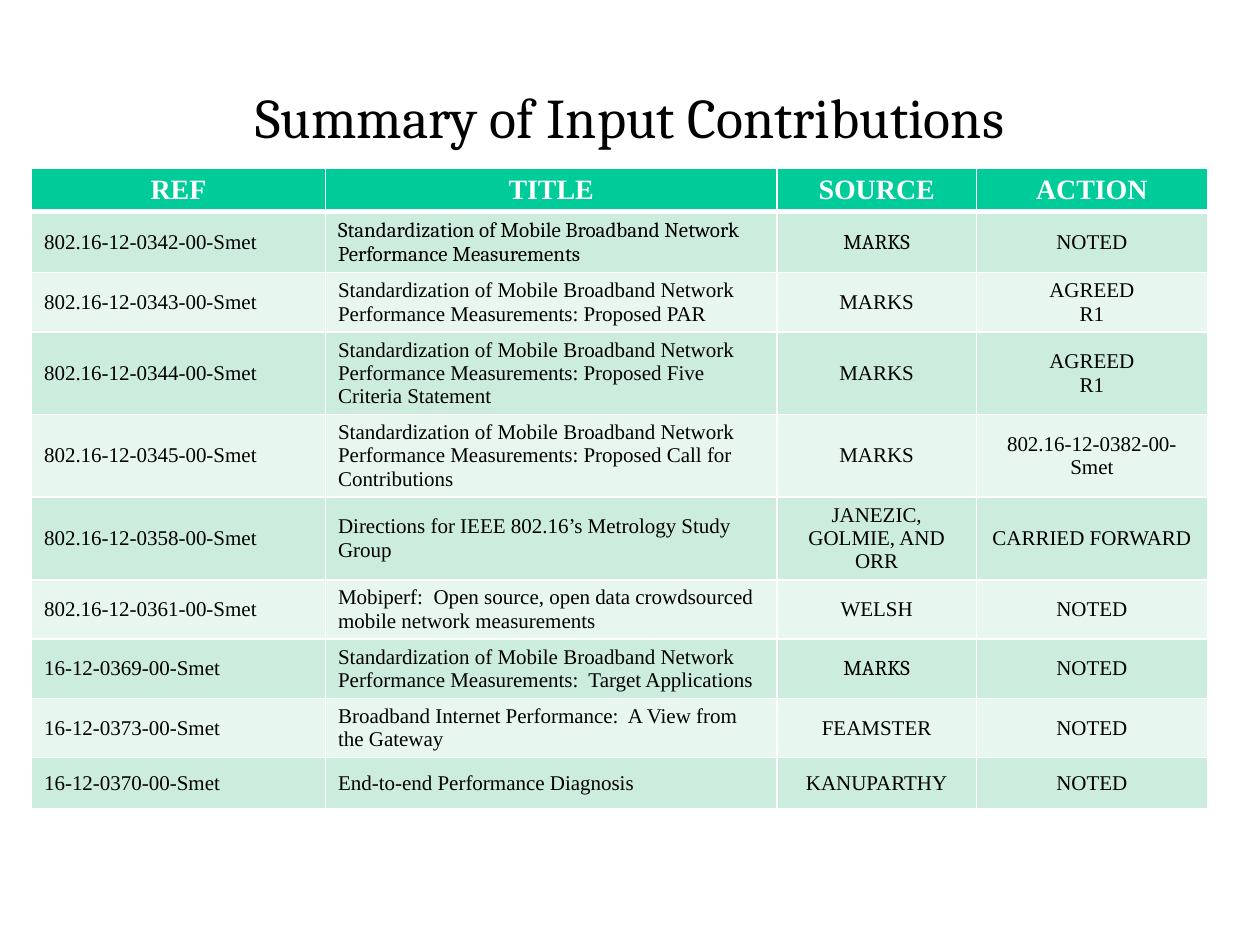
from pptx import Presentation
from pptx.util import Pt
from pptx.dml.color import RGBColor
from pptx.enum import text as t
from pptx.oxml import parse_xml
from pptx.oxml.ns import nsdecls

# Content
TITLE = "Summary of Input Contributions"
HEAD = ("REF", "TITLE", "SOURCE", "ACTION")
STD = "Standardization of Mobile Broadband Network Performance Measurements"
ROWS = [
    ("802.16-12-0342-00-Smet", STD, "MARKS", "NOTED"),
    ("802.16-12-0343-00-Smet", STD + ": Proposed PAR", "MARKS", "AGREED\nR1"),
    ("802.16-12-0344-00-Smet", STD + ": Proposed Five Criteria Statement",
     "MARKS", "AGREED\nR1"),
    ("802.16-12-0345-00-Smet", STD + ": Proposed Call for Contributions",
     "MARKS", "802.16-12-0382-00-Smet"),
    ("802.16-12-0358-00-Smet",
     "Directions for IEEE 802.16’s Metrology Study Group",
     "JANEZIC, GOLMIE, AND ORR", "CARRIED FORWARD"),
    ("802.16-12-0361-00-Smet",
     "Mobiperf:  Open source, open data crowdsourced mobile network "
     "measurements", "WELSH", "NOTED"),
    ("16-12-0369-00-Smet", STD + ":  Target Applications", "MARKS", "NOTED"),
    ("16-12-0373-00-Smet",
     "Broadband Internet Performance:  A View from the Gateway",
     "FEAMSTER", "NOTED"),
    ("16-12-0370-00-Smet", "End-to-end Performance Diagnosis",
     "KANUPARTHY", "NOTED"),
]
SERIF, ALT = "Times New Roman", "Cambria"
ALT_CELLS = {(1, 1), (1, 2), (7, 2)}  # row, column
WIDTHS = (168, 258, 114, 132)
HEAD_H, ROW_H = 21.6, 29.4
GREEN, BANDS = "00CC99", ("E7F6EF", "CCECDE")
WHITE, BLACK = "FFFFFF", "000000"


def paint(fill, color):
    fill.solid()
    fill.fore_color.rgb = RGBColor.from_string(color)


def style(frame, font, size, color, bold, align):
    for para in frame.paragraphs:
        para.alignment = align
        for run in para.runs:
            run.font.name, run.font.size, run.font.bold = font, Pt(size), bold
            run.font.color.rgb = RGBColor.from_string(color)


def border(cell, side, width):
    cell._tc.get_or_add_tcPr().append(parse_xml(
        f'<a:ln{side} {nsdecls("a")} w="{Pt(width)}"><a:solidFill>'
        f'<a:srgbClr val="{WHITE}"/></a:solidFill></a:ln{side}>'))


prs = Presentation()
prs.slide_width, prs.slide_height = Pt(720), Pt(540)
slide = prs.slides.add_slide(prs.slide_layouts[5])
MID, LEFT = t.PP_ALIGN.CENTER, t.PP_ALIGN.LEFT

# Title
title = slide.shapes.title
title.left, title.top, title.width, title.height = map(Pt, (36, 21.6, 648, 90))
title.text_frame.text = TITLE
title.text_frame.vertical_anchor = t.MSO_ANCHOR.MIDDLE
style(title.text_frame, ALT, 32, BLACK, False, MID)

# Table grid
data = [HEAD] + ROWS
table = slide.shapes.add_table(
    len(data), len(HEAD), Pt(18), Pt(96), Pt(sum(WIDTHS)),
    Pt(HEAD_H + ROW_H * len(ROWS))).table
for col, width in zip(table.columns, WIDTHS):
    col.width = Pt(width)

# Cells
for r, row in enumerate(data):
    top = r == 0
    table.rows[r].height = Pt(HEAD_H if top else ROW_H)
    for c, words in enumerate(row):
        cell = table.cell(r, c)
        cell.text_frame.text = words
        for side in "LRTB":
            thick = (top and side == "B") or (r == 1 and side == "T")
            border(cell, side, 3 if thick else 1)
        paint(cell.fill, GREEN if top else BANDS[r % 2])
        if top:
            style(cell.text_frame, SERIF, 16, WHITE, True, MID)
        else:
            cell.vertical_anchor = t.MSO_ANCHOR.MIDDLE
            font = ALT if (r, c) in ALT_CELLS else SERIF
            style(cell.text_frame, font, 12, BLACK, False,
                  LEFT if c < 2 else MID)

prs.save("out.pptx")
